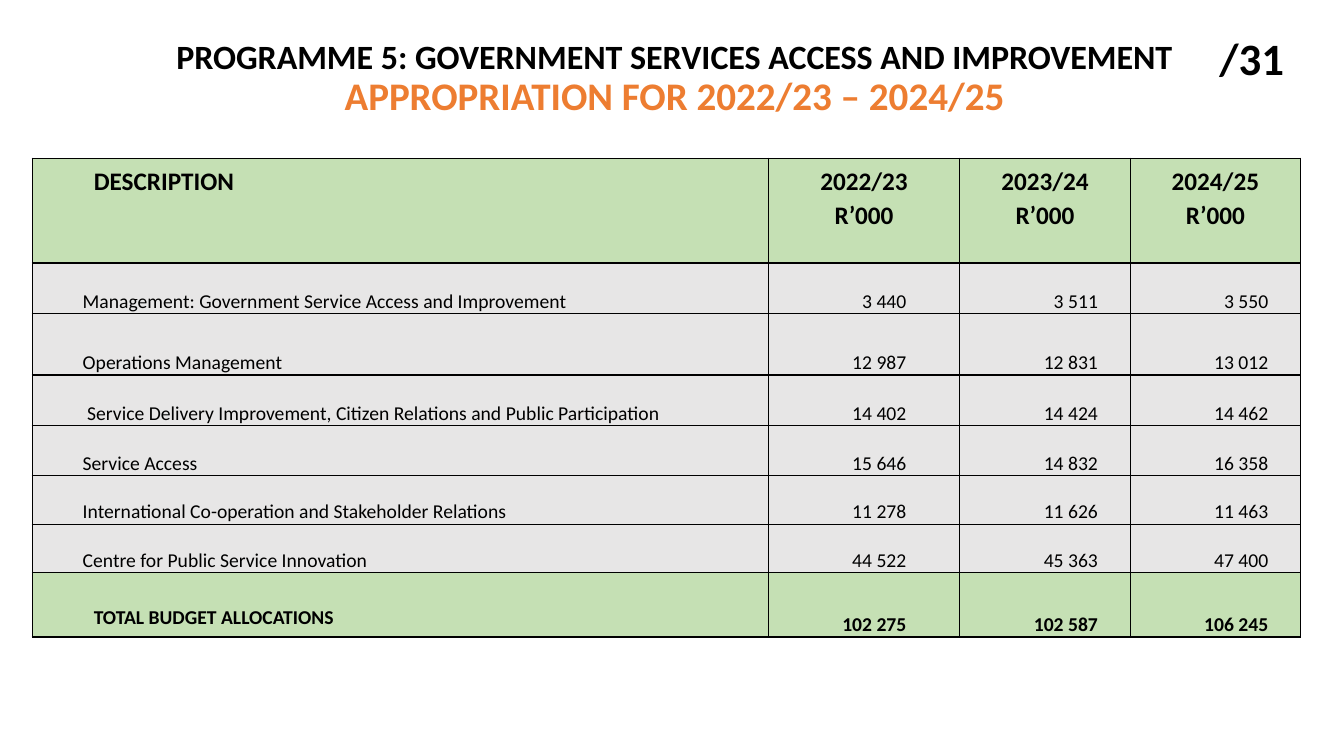
from dataclasses import dataclass
from typing import Any

import pptx
import pptx.dml.color
import pptx.enum.shapes
import pptx.enum.text
import pptx.oxml
import pptx.oxml.ns
import pptx.util

PX = 9144  # EMU per px, 100 px to the inch
FONT = "Calibri"
COLOURS = {"white": "FFFFFF", "black": "000000", "orange": "ED7D31",
           "green": "C5E0B4", "grey": "E7E6E6"}
ALIGN = pptx.enum.text.PP_ALIGN
ANCHOR = pptx.enum.text.MSO_ANCHOR


@dataclass(frozen=True)
class Line:
    text: str
    size: float
    bold: bool = True
    colour: str = "black"


@dataclass(frozen=True)
class Panel:
    left: int
    top: int
    width: int
    height: int
    lines: tuple[Line, ...] = ()
    top_inset: int = 5
    spacing: float = 1.0


@dataclass(frozen=True)
class CellStyle:
    fill: str
    insets: tuple[int, int, int, int]  # left, top, right, bottom
    anchor: Any = ANCHOR.BOTTOM
    align: Any = ALIGN.LEFT
    spacing: float = 1.0


@dataclass(frozen=True)
class BudgetRow:
    description: str
    amounts: tuple[str, str, str]
    height: int


PANELS = (
    Panel(32, 10, 1274, 100,
          (Line("PROGRAMME 5: GOVERNMENT SERVICES ACCESS AND IMPROVEMENT", 24.3),
           Line("APPROPRIATION FOR 2022/23 – 2024/25", 27.9, colour="orange")),
          top_inset=30, spacing=0.9),
    Panel(0, 115, 1333, 635),
    Panel(1177, 26, 129, 48, (Line("/31", 32),)),
)
YEARS = ("2022/23", "2023/24", "2024/25")
HEADER_HEIGHT = 104
COLUMN_WIDTHS = (730, 190, 169, 169)
AMOUNT_INSETS = (53, 32, 32)
BUDGET = (
    BudgetRow("Management: Government Service Access and Improvement",
              ("3 440", "3 511", "3 550"), 50),
    BudgetRow("Operations Management", ("12 987", "12 831", "13 012"), 61),
    BudgetRow(" Service Delivery Improvement, Citizen Relations and Public Participation",
              ("14 402", "14 424", "14 462"), 50),
    BudgetRow("Service Access", ("15 646", "14 832", "16 358"), 50),
    BudgetRow("International Co-operation and Stakeholder Relations",
              ("11 278", "11 626", "11 463"), 48),
    BudgetRow("Centre for Public Service Innovation",
              ("44 522", "45 363", "47 400"), 48),
)
TOTAL = BudgetRow("TOTAL BUDGET ALLOCATIONS", ("102 275", "102 587", "106 245"), 64)


def px(length: int) -> int:
    return length * PX


def rgb(name: str) -> pptx.dml.color.RGBColor:
    return pptx.dml.color.RGBColor.from_string(COLOURS[name])


def apply(target: Any, values: dict[str, Any]) -> None:
    for name, value in values.items():
        setattr(target, name, value)


def write_lines(frame: Any, lines: tuple[Line, ...], align: Any, spacing: float) -> None:
    for index, line in enumerate(lines):
        paragraph = frame.add_paragraph() if index else frame.paragraphs[0]
        apply(paragraph, {"alignment": align, "line_spacing": spacing})
        run = paragraph.add_run()
        run.text = line.text
        apply(run.font, {"name": FONT, "size": pptx.util.Pt(line.size), "bold": line.bold})
        run.font.color.rgb = rgb(line.colour)


def draw_panel(slide: Any, panel: Panel) -> None:
    shape = slide.shapes.add_shape(
        pptx.enum.shapes.MSO_SHAPE.RECTANGLE,
        px(panel.left), px(panel.top), px(panel.width), px(panel.height))
    shape.shadow.inherit = False
    shape.fill.solid()
    shape.fill.fore_color.rgb = rgb("white")
    shape.line.fill.background()
    apply(shape.text_frame, {"word_wrap": True, "vertical_anchor": ANCHOR.TOP,
                             "margin_top": px(panel.top_inset)})
    write_lines(shape.text_frame, panel.lines, ALIGN.CENTER, panel.spacing)


def add_borders(cell: Any) -> None:
    properties = cell._tc.get_or_add_tcPr()
    for position, side in enumerate(("lnL", "lnR", "lnT", "lnB")):
        properties.insert(position, pptx.oxml.parse_xml(
            f'<a:{side} {pptx.oxml.ns.nsdecls("a")} w="12700"><a:solidFill>'
            f'<a:srgbClr val="{COLOURS["black"]}"/></a:solidFill></a:{side}>'))


def draw_cell(cell: Any, lines: tuple[Line, ...], style: CellStyle) -> None:
    cell.fill.solid()
    cell.fill.fore_color.rgb = rgb(style.fill)
    sides = ("margin_left", "margin_top", "margin_right", "margin_bottom")
    apply(cell, dict(zip(sides, map(px, style.insets))))
    cell.vertical_anchor = style.anchor
    write_lines(cell.text_frame, lines, style.align, style.spacing)
    add_borders(cell)


def draw_budget_table(slide: Any) -> None:
    records = (*BUDGET, TOTAL)
    heights = (HEADER_HEIGHT, *(record.height for record in records))
    table = slide.shapes.add_table(
        len(heights), len(COLUMN_WIDTHS), px(32), px(157),
        px(sum(COLUMN_WIDTHS)), px(sum(heights))).table
    for column, width in zip(table.columns, COLUMN_WIDTHS):
        column.width = px(width)
    for row, height in zip(table.rows, heights):
        row.height = px(height)

    # Header row
    heading = CellStyle("green", (61, 5, 11, 5), ANCHOR.TOP, spacing=1.1)
    year_heading = CellStyle("green", (11, 5, 11, 5), ANCHOR.TOP, ALIGN.CENTER, 1.1)
    draw_cell(table.cell(0, 0), (Line("DESCRIPTION", 18),), heading)
    for column, year in enumerate(YEARS, 1):
        draw_cell(table.cell(0, column), (Line(year, 18), Line("R’000", 18)), year_heading)

    # Budget rows and total
    item = CellStyle("grey", (50, 0, 0, 0))
    total_label = CellStyle("green", (61, 31, 11, 5), ANCHOR.TOP, spacing=1.1)
    for index, record in enumerate(records, 1):
        is_total = record is TOTAL
        label = total_label if is_total else item
        draw_cell(table.cell(index, 0), (Line(record.description, 14, is_total),), label)
        for column, (amount, inset) in enumerate(zip(record.amounts, AMOUNT_INSETS), 1):
            draw_cell(table.cell(index, column), (Line(amount, 14, is_total),),
                      CellStyle(label.fill, (0, 0, inset, 0), align=ALIGN.RIGHT))


def main() -> None:
    deck = pptx.Presentation()
    apply(deck, {"slide_width": px(1333), "slide_height": px(750)})
    slide = deck.slides.add_slide(deck.slide_layouts[6])
    title, body, page_number = PANELS
    draw_panel(slide, title)
    draw_panel(slide, body)
    draw_budget_table(slide)
    draw_panel(slide, page_number)
    deck.save("out.pptx")


if __name__ == "__main__":
    main()
